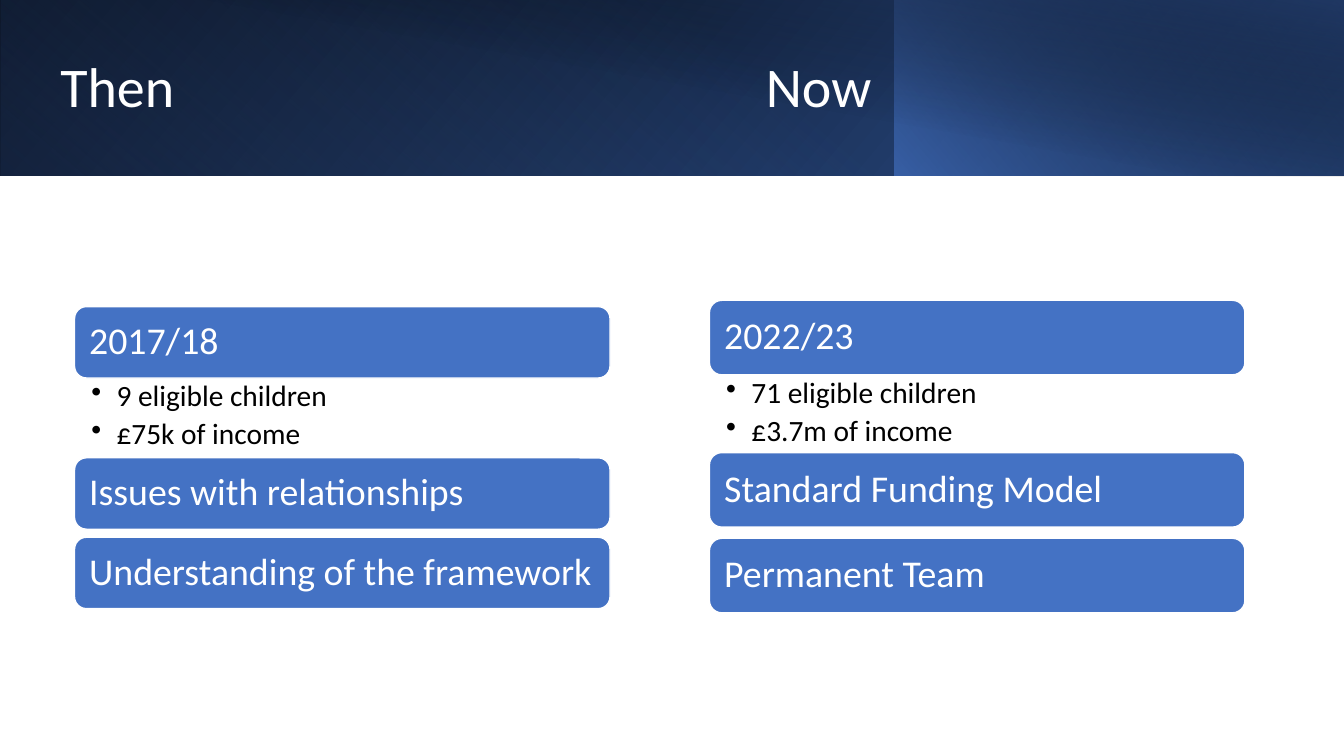
"""Build a Then/Now comparison slide with a gradient banner."""
from dataclasses import dataclass

from lxml import etree
from pptx import Presentation
from pptx.dml.color import RGBColor
from pptx.enum.shapes import MSO_SHAPE
from pptx.enum.text import MSO_ANCHOR, PP_ALIGN
from pptx.oxml.ns import qn
from pptx.util import Pt

RECT, ROUND = MSO_SHAPE.RECTANGLE, MSO_SHAPE.ROUNDED_RECTANGLE
TOP, MIDDLE = MSO_ANCHOR.TOP, MSO_ANCHOR.MIDDLE
LEFT = PP_ALIGN.LEFT
FONT = "Calibri"
WHITE, BLACK, BLUE, NAVY = "FFFFFF", "000000", "4472C4", "203864"
BUTTON_W = 382.5


@dataclass
class Stop:
    pos: int
    color: str
    alpha: int = 100


@dataclass
class Panel:
    x: float
    w: float
    h: float
    angle: int
    stops: tuple[Stop, Stop]
    flip: bool = True
    rotation: int = 0


@dataclass
class Column:
    x: float
    y: float
    button_h: float
    bullets_h: float
    gap: float
    year: str
    facts: tuple[str, ...]
    points: tuple[str, ...]


PANELS = (
    Panel(0, 960, 125.5, 140, (Stop(0, BLACK), Stop(100, "2F5597"))),
    Panel(0, 639.25, 125.5, 230, (Stop(20, BLUE, 0), Stop(100, NAVY, 55)), rotation=180),
    Panel(638.75, 321.25, 125.5, 220, (Stop(0, BLUE, 66), Stop(100, BLACK, 30))),
    Panel(36, 924, 126, 280, (Stop(50, BLACK, 0), Stop(99, NAVY, 52)), flip=False),
)
COLUMNS = (
    Column(53.25, 219, 51, 57, 5.75, "2017/18",
           ("9 eligible children", "£75k of income"),
           ("Issues with relationships", "Understanding of the framework")),
    Column(506.75, 214.5, 53.25, 55.5, 8, "2022/23",
           ("71 eligible children", "£3.7m of income"),
           ("Standard Funding Model", "Permanent Team")),
)


def rgb(color: str) -> RGBColor:
    return RGBColor.from_string(color)


def setup_frame(tf, anchor, side: float, edge: float) -> None:
    tf.word_wrap = True
    tf.vertical_anchor = anchor
    tf.margin_left = tf.margin_right = Pt(side)
    tf.margin_top = tf.margin_bottom = Pt(edge)


def add_run(p, text: str, size: float, color: str) -> None:
    p.alignment = LEFT
    p.line_spacing = 0.9
    r = p.add_run()
    r.text = text
    r.font.name = FONT
    r.font.size = Pt(size)
    r.font.color.rgb = rgb(color)


def add_panel(slide, panel: Panel) -> None:
    sp = slide.shapes.add_shape(RECT, Pt(panel.x), 0, Pt(panel.w), Pt(panel.h))
    sp.shadow.inherit = False
    sp.line.fill.background()
    sp.rotation = panel.rotation
    if panel.flip:
        sp._element.spPr.find(qn("a:xfrm")).set("flipH", "1")
    sp.fill.gradient()
    sp.fill.gradient_angle = 360 - panel.angle
    for stop, spec in zip(sp.fill.gradient_stops, panel.stops):
        stop.position = spec.pos / 100
        stop.color.rgb = rgb(spec.color)
        if spec.alpha < 100:
            clr = stop._gs.find(qn("a:srgbClr"))
            etree.SubElement(clr, qn("a:alpha"), val=str(spec.alpha * 1000))


def add_title(slide, text: str, tab: float) -> None:
    tf = slide.shapes.add_textbox(Pt(36), Pt(23), Pt(851), Pt(81.5)).text_frame
    setup_frame(tf, MIDDLE, 7.2, 3.6)
    p = tf.paragraphs[0]
    add_run(p, text, 40, WHITE)
    tabs = etree.SubElement(p._p.get_or_add_pPr(), qn("a:tabLst"))
    etree.SubElement(tabs, qn("a:tab"), pos=str(Pt(tab)), algn="l")


def add_button(slide, x: float, y: float, h: float, text: str) -> None:
    sp = slide.shapes.add_shape(ROUND, Pt(x), Pt(y), Pt(BUTTON_W), Pt(h))
    sp.shadow.inherit = False
    sp.fill.solid()
    sp.fill.fore_color.rgb = rgb(BLUE)
    sp.line.color.rgb = rgb(WHITE)
    sp.line.width = Pt(1)
    setup_frame(sp.text_frame, MIDDLE, 8, 8)
    add_run(sp.text_frame.paragraphs[0], text, 27, WHITE)


def add_bullets(slide, x: float, y: float, h: float, facts: tuple[str, ...]) -> None:
    tf = slide.shapes.add_textbox(Pt(x), Pt(y), Pt(BUTTON_W), Pt(h)).text_frame
    setup_frame(tf, TOP, 12, 2.5)
    for i, fact in enumerate(facts):
        p = tf.add_paragraph() if i else tf.paragraphs[0]
        add_run(p, fact, 21, BLACK)
        p.space_after = Pt(4.2)
        pPr = p._p.get_or_add_pPr()
        pPr.set("marL", str(Pt(18)))
        pPr.set("indent", str(Pt(-18)))
        etree.SubElement(pPr, qn("a:buChar"), char="•")


def add_column(slide, col: Column) -> None:
    add_button(slide, col.x, col.y, col.button_h, col.year)
    y = col.y + col.button_h
    add_bullets(slide, col.x, y, col.bullets_h, col.facts)
    y += col.bullets_h
    for point in col.points:
        add_button(slide, col.x, y, col.button_h, point)
        y += col.button_h + col.gap


def main() -> None:
    prs = Presentation()
    prs.slide_width, prs.slide_height = Pt(960), Pt(540)
    slide = prs.slides.add_slide(prs.slide_layouts[6])
    for panel in PANELS:
        add_panel(slide, panel)
    add_title(slide, "Then\tNow", 504)
    for col in COLUMNS:
        add_column(slide, col)
    prs.save("out.pptx")


if __name__ == "__main__":
    main()
